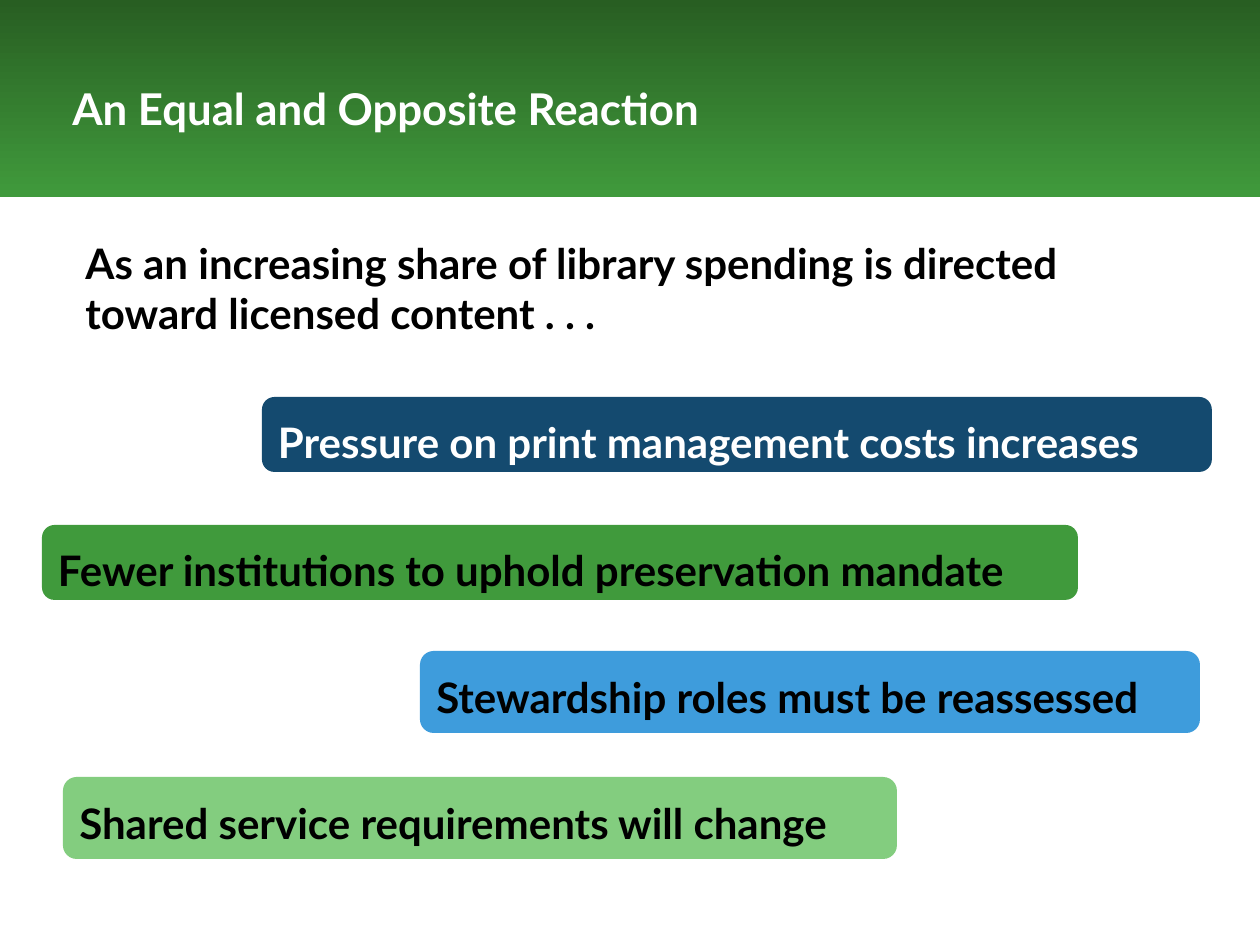
import dataclasses

import lxml.etree
import pptx
import pptx.dml.color
import pptx.enum.shapes
import pptx.enum.text
import pptx.oxml.ns
import pptx.util

PX = pptx.util.Inches(1) // 126
FONT = "Lato"
BLACK = "000000"
WHITE = "FFFFFF"


@dataclasses.dataclass
class Area:
    left: int
    top: int
    width: int
    height: int

    def emu(self) -> list[int]:
        return [length * PX for length in dataclasses.astuple(self)]


@dataclasses.dataclass
class Bar:
    text: str
    area: Area
    fill: str
    color: str = BLACK


BARS = [
    Bar("Pressure on print management costs increases", Area(262, 397, 950, 75), "144A6F", WHITE),
    Bar("Fewer institutions to uphold preservation mandate", Area(42, 525, 1036, 75), "409A3C"),
    Bar("Stewardship roles must be reassessed", Area(420, 651, 780, 82), "3E9CDC"),
    Bar("Shared service requirements will change", Area(63, 777, 834, 82), "83CD7F"),
]


def rgb(color: str) -> pptx.dml.color.RGBColor:
    return pptx.dml.color.RGBColor.from_string(color)


def write(shape, text: str, size: int, color: str, anchor=pptx.enum.text.MSO_ANCHOR.TOP):
    frame = shape.text_frame
    frame.word_wrap = True
    frame.vertical_anchor = anchor
    para = frame.paragraphs[0]
    para.alignment = pptx.enum.text.PP_ALIGN.LEFT
    para.font.name = FONT
    para.font.size = pptx.util.Pt(size)
    para.font.bold = True
    span = para.add_run()
    span.text = text
    span.font.color.rgb = rgb(color)
    return para


def add_band(slide) -> None:
    band = slide.shapes.add_shape(
        pptx.enum.shapes.MSO_SHAPE.RECTANGLE, *Area(0, 0, 1260, 197).emu()
    )
    band.shadow.inherit = False
    band.line.fill.background()
    band.fill.gradient()
    band.fill.gradient_angle = 270
    for stop, color, position in zip(band.fill.gradient_stops, ("285E22", "409A3C"), (0, 1)):
        stop.color.rgb = rgb(color)
        stop.position = position


def add_title(slide) -> None:
    box = slide.shapes.add_textbox(*Area(60, 20, 963, 176).emu())
    para = write(
        box, "An Equal and Opposite Reaction", 25, WHITE, pptx.enum.text.MSO_ANCHOR.MIDDLE
    )
    qn = pptx.oxml.ns.qn
    properties = para.runs[0].font.fill._xPr
    effects = lxml.etree.SubElement(properties, qn("a:effectLst"))
    shadow = lxml.etree.SubElement(
        effects, qn("a:outerShdw"), dist="38100", dir="2700000", algn="tl"
    )
    lxml.etree.SubElement(shadow, qn("a:srgbClr"), val=BLACK)


def add_bar(slide, bar: Bar) -> None:
    shape = slide.shapes.add_shape(
        pptx.enum.shapes.MSO_SHAPE.ROUNDED_RECTANGLE, *bar.area.emu()
    )
    shape.shadow.inherit = False
    shape.line.fill.background()
    shape.fill.solid()
    shape.fill.fore_color.rgb = rgb(bar.fill)
    write(shape, bar.text, 24, bar.color).line_spacing = 1.2


def main() -> None:
    deck = pptx.Presentation()
    deck.slide_width = 1260 * PX
    deck.slide_height = 945 * PX
    page = deck.slides.add_slide(deck.slide_layouts[6])
    add_band(page)
    add_title(page)
    lead = page.shapes.add_textbox(*Area(73, 231, 1092, 115).emu())
    write(
        lead,
        "As an increasing share of library spending is directed toward licensed content . . .",
        24,
        BLACK,
    )
    for bar in BARS:
        add_bar(page, bar)
    deck.save("out.pptx")


if __name__ == "__main__":
    main()
